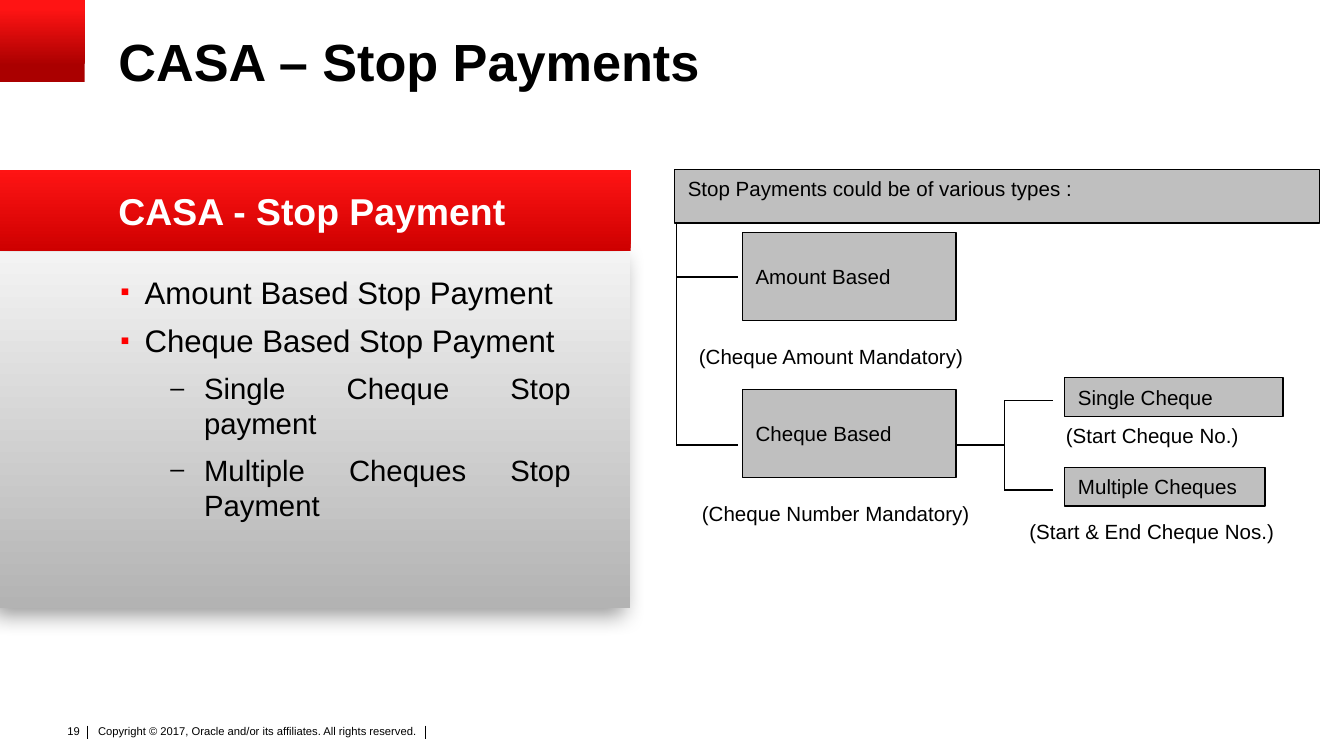
"""Build the CASA stop payments slide with its bullet panel and type diagram."""
from lxml.etree import SubElement
from pptx import Presentation
from pptx.dml.color import RGBColor
from pptx.enum.shapes import MSO_CONNECTOR, MSO_SHAPE
from pptx.enum.text import MSO_ANCHOR, MSO_AUTO_SIZE, PP_ALIGN
from pptx.oxml.ns import qn
from pptx.util import Pt

BLACK = RGBColor(0x00, 0x00, 0x00)
WHITE = RGBColor(0xFF, 0xFF, 0xFF)
BOX_GRAY = RGBColor(0xBF, 0xBF, 0xBF)
PANEL_DARK = RGBColor(0xB3, 0xB3, 0xB3)
PANEL_LIGHT = RGBColor(0xF3, 0xF3, 0xF3)
BRIGHT_RED = RGBColor(0xFF, 0x14, 0x14)
BANNER_RED = RGBColor(0xCE, 0x00, 0x00)
DEEP_RED = RGBColor(0xAA, 0x00, 0x00)
BULLET_RED = RGBColor(0xFF, 0x00, 0x00)


def write_text(box, text, size, margins=(7.2, 3.6), anchor=MSO_ANCHOR.TOP,
               align=PP_ALIGN.LEFT, color=BLACK, bold=False):
    frame = box.text_frame
    side, top = (Pt(margin) for margin in margins)
    frame_format = {
        "word_wrap": True, "auto_size": MSO_AUTO_SIZE.NONE,
        "vertical_anchor": anchor, "margin_left": side, "margin_right": side,
        "margin_top": top, "margin_bottom": top,
    }
    for name, value in frame_format.items():
        setattr(frame, name, value)
    frame.text = text
    for paragraph in frame.paragraphs:
        paragraph.alignment = align
        paragraph.space_before = Pt(0)
        for span in paragraph.runs:
            for name, value in {"name": "Arial", "size": Pt(size), "bold": bold}.items():
                setattr(span.font, name, value)
            span.font.color.rgb = color
    return frame.paragraphs


def draw_line(page, start, end, width=0.75):
    line = page.shapes.add_connector(MSO_CONNECTOR.STRAIGHT, *map(Pt, start + end))
    line.line.color.rgb = BLACK
    line.line.width = Pt(width)
    SubElement(line.element.spPr, qn("a:effectLst"))


deck = Presentation()
deck.slide_width, deck.slide_height = Pt(720), Pt(405)
page = deck.slides.add_slide(deck.slide_layouts[3])
title, bullets, heading = page.placeholders

copyright_box = page.shapes.add_textbox(Pt(49.7), Pt(386.6), Pt(197.3), Pt(17.3))
write_text(copyright_box,
           "Copyright © 2017, Oracle and/or its affiliates. All rights reserved.",
           6, margins=(2.9, 1.4))
number_box = page.shapes.add_textbox(Pt(20.2), Pt(384.5), Pt(29.7), Pt(14.4))
write_text(number_box, "19", 6, align=PP_ALIGN.RIGHT)
for x in (47, 228):
    draw_line(page, (x, 388.8), (x, 396), 0.5)

panels = [
    ((0, 135, 337.5, 190.8), (0, PANEL_DARK), (1, PANEL_LIGHT)),
    ((0, 91, 337.9, 43.5), (0, BANNER_RED), (1, BRIGHT_RED)),
    ((0, 0, 45.4, 43.9), (0.2, DEEP_RED), (0.9, BRIGHT_RED)),
]
for bounds, *colors in panels:
    panel = page.shapes.add_shape(MSO_SHAPE.RECTANGLE, *map(Pt, bounds))
    panel.shadow.inherit = False
    panel.line.fill.background()
    panel.fill.gradient()
    panel.fill.gradient_angle = 90
    for stop, (position, color) in zip(panel.fill.gradient_stops, colors):
        stop.position = position
        stop.color.rgb = color
    if PANEL_DARK in colors[0]:
        effects = panel.element.spPr.find(qn("a:effectLst"))
        shadow = SubElement(effects, qn("a:outerShdw"), blurRad=str(Pt(12)),
                            dist=str(Pt(5)), dir=str(130 * 60000), rotWithShape="0")
        shade = SubElement(shadow, qn("a:srgbClr"), val=str(BLACK))
        SubElement(shade, qn("a:alpha"), val="40000")

placements = [
    (bullets, (59.3, 146.2, 246.5, 168.5)),
    (heading, (63.4, 91.4, 268.6, 43.2)),
    (title, (63.4, 19.4, 647.3, 60.5)),
]
for placeholder, bounds in placements:
    for name, value in zip(("left", "top", "width", "height"), bounds):
        setattr(placeholder, name, Pt(value))
    page.shapes.element.append(placeholder.element)

write_text(title, "CASA – Stop Payments", 28, (0, 0), bold=True)[0].line_spacing = 0.9

heading_line = write_text(heading, "CASA - Stop Payment", 20, (0, 0),
                          MSO_ANCHOR.MIDDLE, color=WHITE, bold=True)[0]
heading_properties = heading_line._p.get_or_add_pPr()
heading_properties.set("marL", "0")
heading_properties.set("indent", "0")
SubElement(heading_properties, qn("a:buNone"))

items = [
    ("Amount Based Stop Payment", 0),
    ("Cheque Based Stop Payment", 0),
    ("Single Cheque Stop payment", 1),
    ("Multiple Cheques Stop Payment", 1),
]
levels = [("▪", BULLET_RED, 18.2, -13, 16.7), ("–", BLACK, 50, -18, 15.7)]
paragraphs = write_text(bullets, "\n".join(text for text, level in items), 16.7,
                        (0, 0), align=PP_ALIGN.JUSTIFY)
for paragraph, (text, level) in zip(paragraphs, items):
    mark, color, margin, indent, size = levels[level]
    paragraph.level = level
    paragraph.space_after = Pt(6)
    paragraph.runs[0].font.size = Pt(size)
    properties = paragraph._p.get_or_add_pPr()
    properties.set("marL", str(Pt(margin)))
    properties.set("indent", str(Pt(indent)))
    SubElement(SubElement(properties, qn("a:buClr")), qn("a:srgbClr"), val=str(color))
    SubElement(properties, qn("a:buSzPct"), val="85000")
    SubElement(properties, qn("a:buFont"), typeface="Arial")
    SubElement(properties, qn("a:buChar"), char=mark)

type_boxes = [
    ("Stop Payments could be of various types :", 361.4, 90.7, 345.6, 28.8, MSO_ANCHOR.TOP),
    ("Amount Based", 397.7, 124.6, 114.4, 47.2, MSO_ANCHOR.MIDDLE),
    ("Cheque Based", 397.7, 208.7, 114.4, 47.2, MSO_ANCHOR.MIDDLE),
    ("Single Cheque", 570.4, 202.4, 117, 20.7, MSO_ANCHOR.MIDDLE),
    ("Multiple Cheques", 570.4, 250.4, 107.4, 20.7, MSO_ANCHOR.MIDDLE),
]
for text, left, top, width, height, anchor in type_boxes:
    box = page.shapes.add_shape(MSO_SHAPE.RECTANGLE, Pt(left), Pt(top), Pt(width), Pt(height))
    box.shadow.inherit = False
    box.fill.solid()
    box.fill.fore_color.rgb = BOX_GRAY
    box.line.color.rgb = BLACK
    box.line.width = Pt(0.75)
    write_text(box, text, 11, anchor=anchor)

requirements = [
    ("(Cheque Amount Mandatory)", 367.3, 180.9, 190),
    ("(Cheque Number Mandatory)", 368.9, 265, 190),
    ("(Start Cheque No.)", 563.9, 223.3, 130.3),
    ("(Start & End Cheque Nos.)", 544.4, 274.6, 175),
]
for text, left, top, width in requirements:
    write_text(page.shapes.add_textbox(Pt(left), Pt(top), Pt(width), Pt(20.7)), text, 11)

trunk, fork = 362.4, 538
amount_y, cheque_y, single_y, multiple_y = 148.5, 238.5, 214.6, 262.6
branches = [
    ((trunk, 118.8), (trunk, cheque_y)),
    ((trunk, amount_y), (395.3, amount_y)),
    ((trunk, cheque_y), (395.3, cheque_y)),
    ((512, cheque_y), (fork, cheque_y)),
    ((fork, single_y), (fork, multiple_y)),
    ((fork, single_y), (564, single_y)),
    ((fork, multiple_y), (564, multiple_y)),
]
for start, end in branches:
    draw_line(page, start, end)

deck.save("out.pptx")
